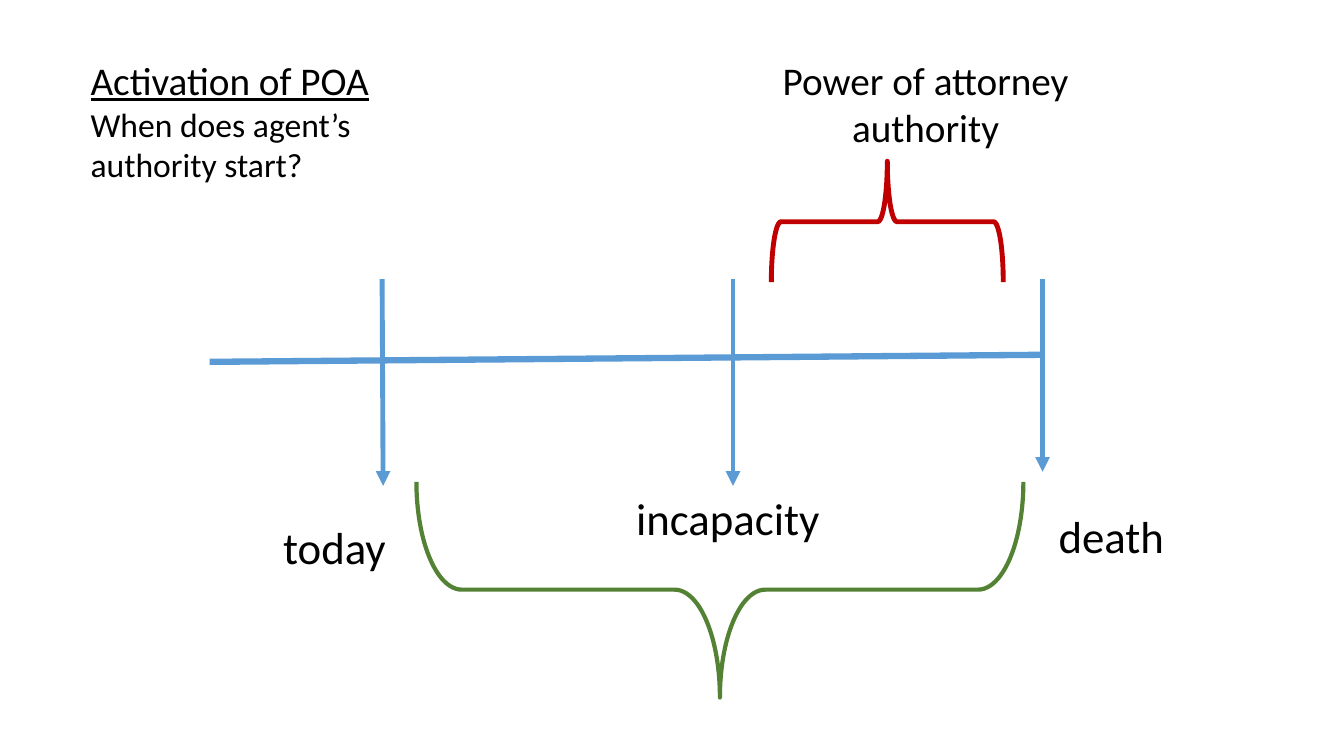
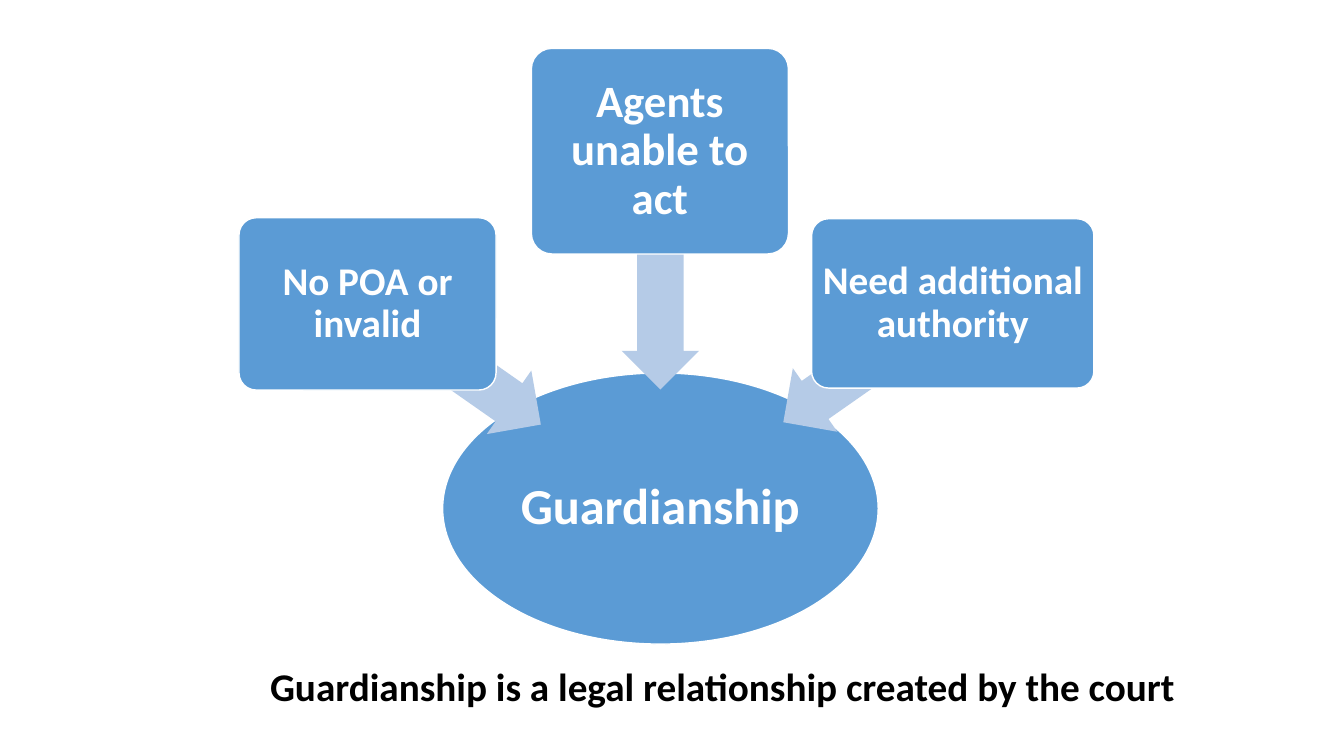
"""Builds two slides: a power of attorney timeline and the causes of guardianship."""
import lxml.etree
import pptx
import pptx.dml.color
import pptx.enum.shapes
import pptx.enum.text
import pptx.oxml.ns
import pptx.util

Inches = pptx.util.Inches
Pt = pptx.util.Pt
RGBColor = pptx.dml.color.RGBColor
SHAPE = pptx.enum.shapes.MSO_SHAPE
ALIGN = pptx.enum.text.PP_ALIGN

FONT = "Calibri"
BLACK = RGBColor(0x00, 0x00, 0x00)
WHITE = RGBColor(0xFF, 0xFF, 0xFF)
BLUE = RGBColor(0x5B, 0x9B, 0xD5)
PALE_BLUE = RGBColor(0xB5, 0xCB, 0xE7)
RED = RGBColor(0xC0, 0x00, 0x00)
GREEN = RGBColor(0x54, 0x82, 0x35)


def write(frame, text, size, color=BLACK, bold=False, align=ALIGN.LEFT):
    """Set the text of a frame and format every run."""
    frame.word_wrap = True
    frame.text = text
    for para in frame.paragraphs:
        para.alignment = align
        for span in para.runs:
            span.font.name = FONT
            span.font.size = Pt(size)
            span.font.bold = bold
            span.font.color.rgb = color


def add_label(page, place, text, size, bold=False, align=ALIGN.LEFT):
    """Add a black text box that grows with its text."""
    box = page.shapes.add_textbox(*map(Inches, place))
    write(box.text_frame, text, size, bold=bold, align=align)
    box.text_frame.auto_size = pptx.enum.text.MSO_AUTO_SIZE.SHAPE_TO_FIT_TEXT
    return box


deck = pptx.Presentation()
deck.slide_width = Inches(13.33)
deck.slide_height = Inches(7.5)
blank = deck.slide_layouts[6]

timeline_page = deck.slides.add_slide(blank)

timeline_lines = [
    (2.08, 3.59, 10.34, 3.52, 4.5, False),
    (3.79, 2.77, 3.8, 4.82, 3.5, True),
    (7.27, 2.77, 7.27, 4.82, 3.5, True),
    (10.34, 2.77, 10.34, 4.68, 3.5, True),
]
for x1, y1, x2, y2, width, has_arrow in timeline_lines:
    line = timeline_page.shapes.add_connector(
        pptx.enum.shapes.MSO_CONNECTOR.STRAIGHT,
        Inches(x1), Inches(y1), Inches(x2), Inches(y2))
    line.line.color.rgb = BLUE
    line.line.width = Pt(width)
    properties = line.element.spPr
    if has_arrow:
        outline = properties.find(pptx.oxml.ns.qn("a:ln"))
        lxml.etree.SubElement(outline, pptx.oxml.ns.qn("a:tailEnd"), type="triangle")
    lxml.etree.SubElement(properties, pptx.oxml.ns.qn("a:effectLst"))

braces = [
    (SHAPE.LEFT_BRACE, (8.2, 1.05, 1.2, 2.3), 0.08, RED, 3.5),
    (SHAPE.RIGHT_BRACE, (6.07, 2.84, 2.14, 6.02), 0.21, GREEN, 3),
]
for kind, place, curve, color, width in braces:
    brace = timeline_page.shapes.add_shape(kind, *map(Inches, place))
    brace.rotation = 90
    brace.adjustments[0] = curve
    brace.shadow.inherit = False
    brace.fill.background()
    brace.line.color.rgb = color
    brace.line.width = Pt(width)

add_label(timeline_page, (2.71, 5.11, 2.26, 0.64), "today", 32)
add_label(timeline_page, (6.21, 4.82, 2.21, 0.64), "incapacity", 32)
add_label(timeline_page, (10.4, 5, 1.49, 0.64), "death", 32)
add_label(timeline_page, (6.92, 0.51, 4.52, 1.04),
          "Power of attorney\nauthority", 28, align=ALIGN.CENTER)
heading = add_label(timeline_page, (0.8, 0.51, 4.51, 1.38),
                    "Activation of POA\nWhen does agent’s\nauthority start?", 24)
title_font = heading.text_frame.paragraphs[0].runs[0].font
title_font.size = Pt(28)
title_font.underline = True

guardianship_page = deck.slides.add_slide(blank)

arrow_height = 0.77
nodes = [
    (SHAPE.OVAL, (4.39, 3.7, 4.32, 2.69), "Guardianship", 36, None),
    (SHAPE.ROUNDED_RECTANGLE, (2.37, 2.16, 2.55, 1.71),
     "No POA or invalid", 28, (3.09, 3.11, 2.5, 215)),
    (SHAPE.ROUNDED_RECTANGLE, (5.27, 0.48, 2.55, 2.04),
     "Agents unable to act", 32, (5.23, 2.16, 2.64, 270)),
    (SHAPE.ROUNDED_RECTANGLE, (8.05, 2.17, 2.8, 1.68),
     "Need additional authority", 28, (7.55, 3.11, 2.42, 325)),
]
for kind, place, text, size, arrow_place in nodes:
    if arrow_place:
        left, top, length, angle = arrow_place
        arrow = guardianship_page.shapes.add_shape(
            SHAPE.LEFT_ARROW, Inches(left), Inches(top),
            Inches(length), Inches(arrow_height))
        arrow.rotation = angle
        arrow.adjustments[0] = 0.6
        arrow.adjustments[1] = 0.5
        arrow.shadow.inherit = False
        arrow.fill.solid()
        arrow.fill.fore_color.rgb = PALE_BLUE
        arrow.line.fill.background()
    node = guardianship_page.shapes.add_shape(kind, *map(Inches, place))
    if kind == SHAPE.ROUNDED_RECTANGLE:
        node.adjustments[0] = 0.1
    node.shadow.inherit = False
    node.fill.solid()
    node.fill.fore_color.rgb = BLUE
    node.line.color.rgb = WHITE
    node.line.width = Pt(1)
    frame = node.text_frame
    write(frame, text, size, WHITE, True, ALIGN.CENTER)
    frame.paragraphs[0].line_spacing = 0.9
    frame.vertical_anchor = pptx.enum.text.MSO_ANCHOR.MIDDLE
    frame.margin_left = frame.margin_right = Inches(0.06)
    frame.margin_top = frame.margin_bottom = Inches(0.06)

add_label(guardianship_page, (2.58, 6.52, 10.08, 0.57),
          "Guardianship is a legal relationship created by the court", 28, bold=True)

deck.save("out.pptx")
